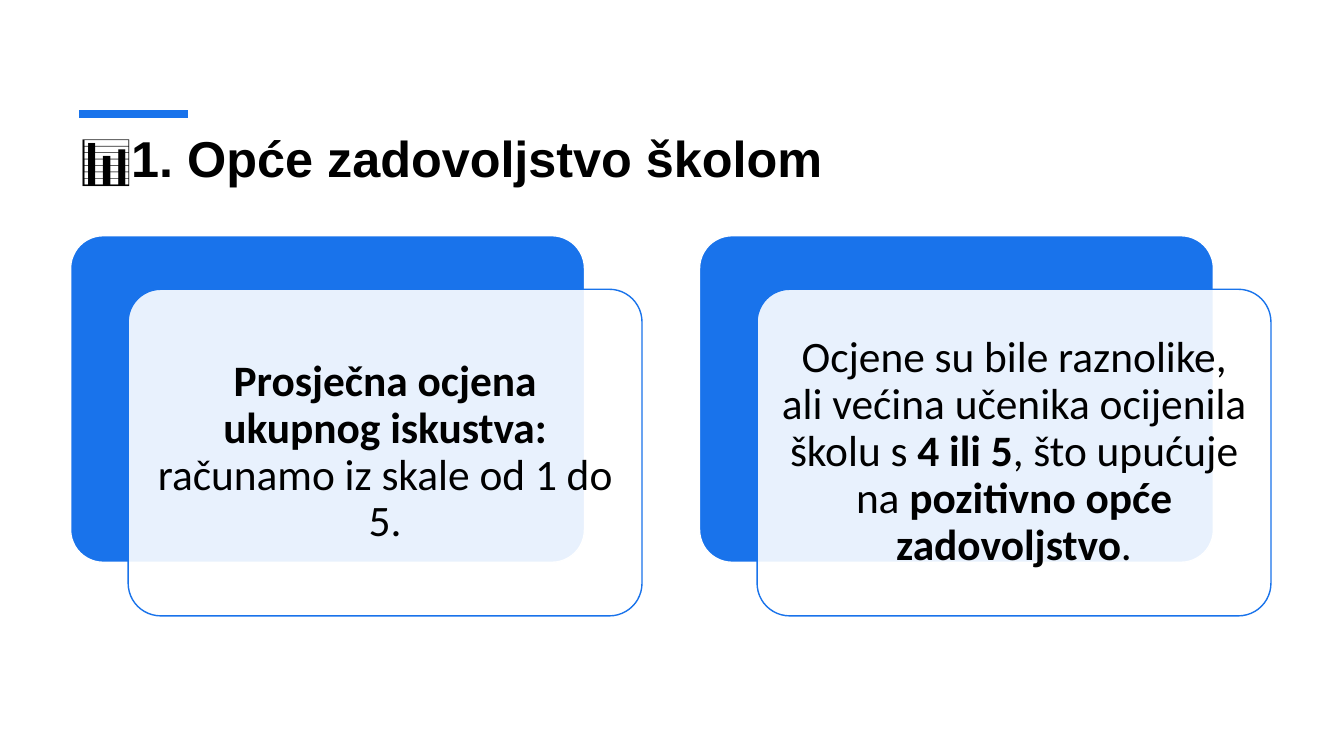
from lxml import etree
from pptx import Presentation
from pptx.dml.color import RGBColor
from pptx.enum.shapes import MSO_CONNECTOR, MSO_SHAPE
from pptx.enum.text import MSO_ANCHOR, PP_ALIGN
from pptx.oxml.ns import qn
from pptx.util import Cm, Pt

ROUNDED = MSO_SHAPE.ROUNDED_RECTANGLE
STRAIGHT = MSO_CONNECTOR.STRAIGHT
TOP, MIDDLE = MSO_ANCHOR.TOP, MSO_ANCHOR.MIDDLE
LEFT, CENTER = PP_ALIGN.LEFT, PP_ALIGN.CENTER


def rgb(value):
    return RGBColor.from_string(value)


def add_run(p, text, font="Calibri", size=31, color="000000", bold=False):
    r = p.add_run()
    r.text = text
    r.font.name, r.font.size, r.font.bold = font, Pt(size), bold
    r.font.color.rgb = rgb(color)


class SlideBuilder:
    BLUE, WHITE = "1973EB", "FFFFFF"
    CARD_W, CARD_H = 12.95, 8.23
    SHIFT_X, SHIFT_Y = 1.45, 1.35

    def __init__(self, prs):
        self.s = prs.slides.add_slide(prs.slide_layouts[6])
        self.s.background.fill.solid()
        self.s.background.fill.fore_color.rgb = rgb(self.WHITE)

    def accent(self, x1, x2, y):
        line = self.s.shapes.add_connector(STRAIGHT, Cm(x1), Cm(y), Cm(x2), Cm(y))
        line.line.color.rgb = rgb(self.BLUE)
        line.line.width = Pt(6)
        etree.SubElement(line._element.spPr, qn("a:effectLst"))

    def fill_text(self, tf, runs, anchor, align, spacing=1.0):
        tf.word_wrap = True
        tf.vertical_anchor = anchor
        p = tf.paragraphs[0]
        p.alignment, p.line_spacing = align, spacing
        for text, style in runs:
            add_run(p, text, **style)

    def title(self, x, y, w, h, runs):
        sp = self.s.shapes.add_textbox(Cm(x), Cm(y), Cm(w), Cm(h))
        self.fill_text(sp.text_frame, runs, TOP, LEFT)

    def panel(self, x, y, fill, line, opacity=100):
        sp = self.s.shapes.add_shape(ROUNDED, Cm(x), Cm(y), Cm(self.CARD_W), Cm(self.CARD_H))
        sp.adjustments[0] = 0.1
        sp.shadow.inherit = False
        sp.fill.solid()
        sp.fill.fore_color.rgb = rgb(fill)
        sp.line.color.rgb = rgb(line)
        sp.line.width = Pt(1)
        if opacity < 100:
            color = sp._element.spPr.find(qn("a:solidFill"))[0]
            etree.SubElement(color, qn("a:alpha"), val=str(opacity * 1000))
        return sp

    def card(self, x, y, runs):
        self.panel(x, y, self.BLUE, self.WHITE)
        sp = self.panel(x + self.SHIFT_X, y + self.SHIFT_Y, self.WHITE, self.BLUE, opacity=90)
        tf = sp.text_frame
        tf.margin_left = tf.margin_right = tf.margin_top = tf.margin_bottom = Cm(0.33)
        self.fill_text(tf, runs, MIDDLE, CENTER, spacing=0.9)


def main():
    prs = Presentation()
    prs.slide_width, prs.slide_height = Cm(33.87), Cm(19.05)
    slide = SlideBuilder(prs)
    bold = {"bold": True}

    # Heading
    slide.accent(2, 4.75, 2.87)
    slide.title(1.78, 3.07, 30.25, 2, [
        ("📊", {"size": 36, "bold": True}),
        ("1. Opće zadovoljstvo školom", {"font": "Arial", "size": 36, "bold": True}),
    ])

    # Cards
    cards = [
        [("Prosječna ocjena ukupnog iskustva:", bold),
         (" računamo iz skale od 1 do 5.", {})],
        [("Ocjene su bile raznolike, ali većina učenika ocijenila školu s ", {}),
         ("4 ili 5", bold),
         (", što upućuje na ", {}),
         ("pozitivno opće zadovoljstvo", bold),
         (".", {})],
    ]
    for i, runs in enumerate(cards):
        slide.card(1.78 + i * 15.85, 5.94, runs)

    prs.save("out.pptx")


if __name__ == "__main__":
    main()
